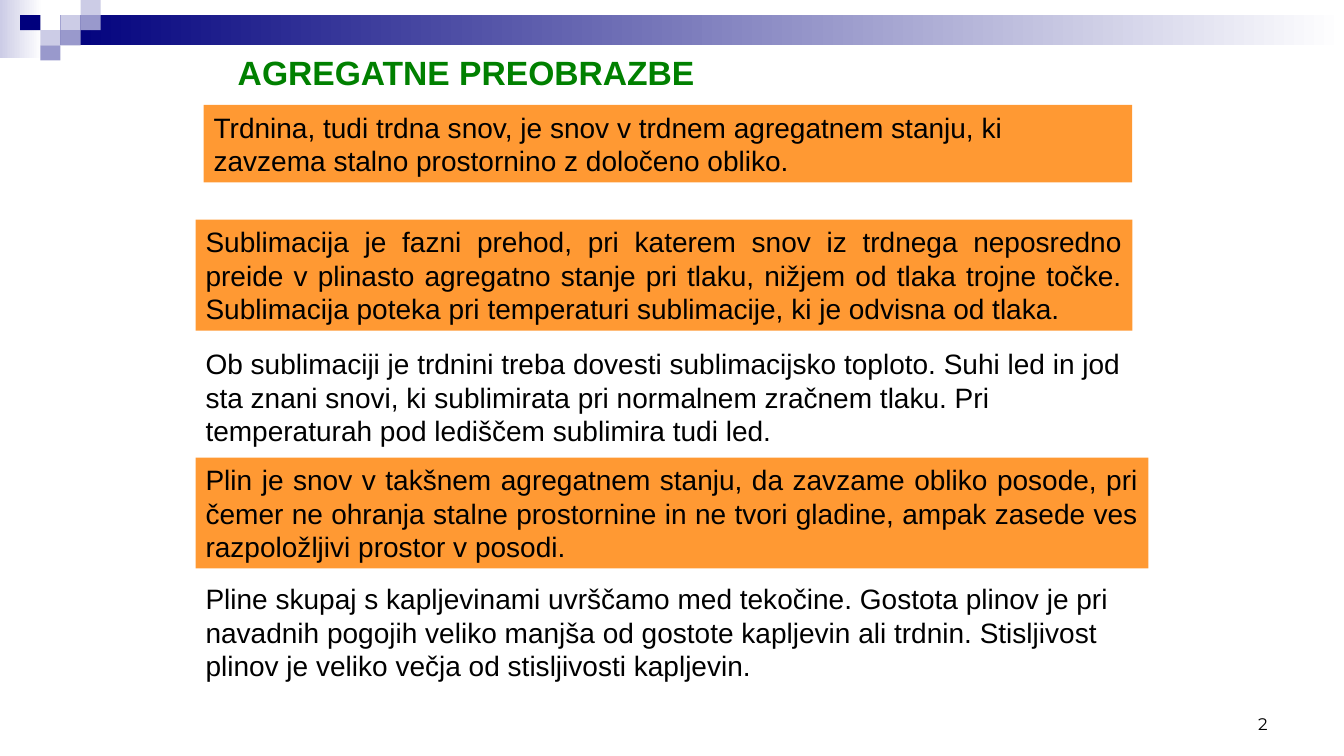
from pptx import Presentation
from pptx import util as u
from pptx.dml.color import RGBColor
from pptx.enum import shapes, text

NAVY, LILAC, PALE, WHITE = "00007D", "9999CC", "CCCCE6", "FFFFFF"
ORANGE, GREEN, BLACK = "FF9933", "008000", "000000"
LEFT = text.PP_ALIGN.LEFT
RIGHT = text.PP_ALIGN.RIGHT
JUSTIFY = text.PP_ALIGN.JUSTIFY
MIDDLE, BOTTOM = text.MSO_ANCHOR.MIDDLE, text.MSO_ANCHOR.BOTTOM


def rgb(color):
    return RGBColor.from_string(color)


def add_rect(s, box, color, fade_to=None):
    sp = s.shapes.add_shape(shapes.MSO_SHAPE.RECTANGLE, *map(u.Inches, box))
    sp.shadow.inherit = False
    sp.line.fill.background()
    if fade_to:
        sp.fill.gradient()
        sp.fill.gradient_angle = 0
        for stop, shade, position in zip(sp.fill.gradient_stops, (color, fade_to), (0, 1)):
            stop.color.rgb = rgb(shade)
            stop.position = position
    else:
        sp.fill.solid()
        sp.fill.fore_color.rgb = rgb(color)
    return sp


def add_text(s, box, lines, size=20, color=BLACK, font="Arial", bold=False,
             align=LEFT, anchor=MIDDLE, fill=None):
    if fill:
        sp = add_rect(s, box, fill)
    else:
        sp = s.shapes.add_textbox(*map(u.Inches, box))
    tf = sp.text_frame
    tf.word_wrap = True
    tf.vertical_anchor = anchor
    for i, line in enumerate(lines):
        p = tf.add_paragraph() if i else tf.paragraphs[0]
        p.alignment = align
        r = p.add_run()
        r.text = line
        r.font.name, r.font.size, r.font.bold = font, u.Pt(size), bold
        r.font.color.rgb = rgb(color)


def add_banner(s, left, top, width):
    """Fading bar with a mosaic of small tiles on its left end."""
    col, row = 0.2, 0.15
    add_rect(s, (left, top, 0.42, 0.58), PALE, WHITE)
    add_rect(s, (left + 3 * col, top + row, width - 3 * col, 2 * row), NAVY, WHITE)
    tiles = [(3, 1, PALE), (4, 0, PALE), (4, 1, LILAC), (2, 2, PALE),
             (1, 1, NAVY), (3, 2, LILAC), (2, 3, LILAC)]
    for c, r, color in tiles:
        add_rect(s, (left + c * col, top + r * row, col, row), color)


def add_definitions(s, left, top):
    """Stack of definitions (orange) and explanations (plain).

    Each entry: x and y offset, width, height, fill, alignment, paragraphs.
    """
    entries = [
        (0.08, 0, 9.21, 0.77, ORANGE, LEFT,
         ["Trdnina, tudi trdna snov, je snov v trdnem agregatnem stanju, ki "
          "zavzema stalno prostornino z določeno obliko."]),
        (0, 1.14, 9.29, 1.1, ORANGE, JUSTIFY,
         ["Sublimacija je fazni prehod, pri katerem snov iz trdnega neposredno "
          "preide v plinasto agregatno stanje pri tlaku, nižjem od tlaka trojne točke. "
          "Sublimacija poteka pri temperaturi sublimacije, ki je odvisna od tlaka."]),
        (0, 2.35, 9.53, 1.1, None, LEFT,
         ["Ob sublimaciji je trdnini treba dovesti sublimacijsko toploto. Suhi led in jod "
          "sta znani snovi, ki sublimirata pri normalnem zračnem tlaku. Pri "
          "temperaturah pod lediščem sublimira tudi led."]),
        (0, 3.5, 9.45, 1.1, ORANGE, JUSTIFY,
         ["Plin je snov v takšnem agregatnem stanju, da zavzame obliko posode, pri "
          "čemer ne ohranja stalne prostornine in ne tvori gladine, ampak zasede ves "
          "razpoložljivi prostor v posodi."]),
        (0, 4.68, 9.73, 1.1, None, LEFT,
         ["Pline skupaj s kapljevinami uvrščamo med tekočine. Gostota plinov je pri",
          "navadnih pogojih veliko manjša od gostote kapljevin ali trdnin. Stisljivost",
          "plinov je veliko večja od stisljivosti kapljevin."]),
    ]
    for dx, dy, width, height, fill, align, lines in entries:
        add_text(s, (left + dx, top + dy, width, height), lines, align=align, fill=fill)


def main():
    prs = Presentation()
    prs.slide_width, prs.slide_height = u.Inches(13.33), u.Inches(7.5)
    s = prs.slides.add_slide(prs.slide_layouts[6])

    add_banner(s, 0, 0, 13.33)
    # Slide number
    add_text(s, (9.56, 6.83, 3.11, 0.5), ["2"], size=12, font="Montserrat",
             align=RIGHT, anchor=BOTTOM)
    # Title
    add_text(s, (2.26, 0.47, 4.83, 0.5), ["AGREGATNE PREOBRAZBE"], size=24,
             color=GREEN, bold=True)
    add_definitions(s, 1.94, 1.04)

    prs.save("out.pptx")


if __name__ == "__main__":
    main()
